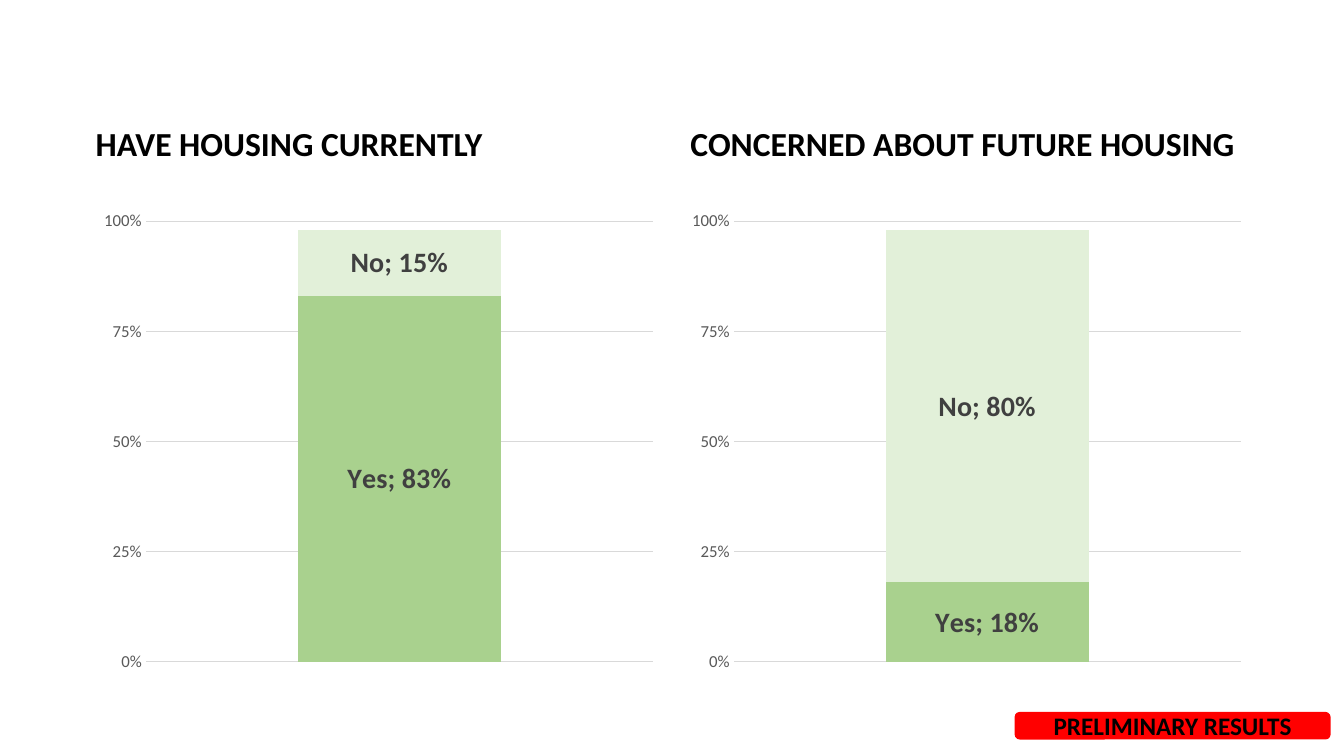
from pptx import Presentation
from pptx.chart.data import CategoryChartData
from pptx.dml.color import RGBColor
from pptx.enum.chart import XL_CHART_TYPE, XL_TICK_MARK
from pptx.enum.shapes import MSO_SHAPE
from pptx.enum.text import MSO_ANCHOR, MSO_AUTO_SIZE, PP_ALIGN
from pptx.util import Inches, Pt

STACKED = XL_CHART_TYPE.COLUMN_STACKED
NO_TICK = XL_TICK_MARK.NONE
ROUNDED = MSO_SHAPE.ROUNDED_RECTANGLE
MIDDLE = MSO_ANCHOR.MIDDLE
GROW = MSO_AUTO_SIZE.SHAPE_TO_FIT_TEXT
LEFT, CENTER = PP_ALIGN.LEFT, PP_ALIGN.CENTER

COLORS = {
    "black": "000000",
    "label": "404040",
    "axis": "595959",
    "grid": "D9D9D9",
    "Yes": "A9D18E",
    "No": "E2F0D9",
    "red": "FF0000",
}


def color(name):
    return RGBColor.from_string(COLORS[name])


def write(frame, text, size=24, align=LEFT):
    """Put one bold black line into a text frame."""
    para = frame.paragraphs[0]
    para.alignment = align
    run = para.add_run()
    run.text = text
    run.font.name = "Calibri"
    run.font.size = Pt(size)
    run.font.bold = True
    run.font.color.rgb = color("black")


deck = Presentation()
deck.slide_width = Inches(13.33)
deck.slide_height = Inches(7.5)
slide = deck.slides.add_slide(deck.slide_layouts[6])
shapes = slide.shapes

# Title, title left, title width, chart left, shares
panels = [
    ("HAVE HOUSING CURRENTLY", 0.85, 4.07, 0.92, {"Yes": 0.83, "No": 0.15}),
    ("CONCERNED ABOUT FUTURE HOUSING", 6.75, 5.65, 6.75, {"Yes": 0.18, "No": 0.8}),
]

for title, left, width, start, shares in panels:
    data = CategoryChartData(number_format="0%")
    data.categories = ["1"]
    for answer, share in shares.items():
        data.add_series(answer, [share])
    chart = shapes.add_chart(
        STACKED, Inches(start), Inches(2), Inches(5.67), Inches(4.76), data
    ).chart
    chart.has_legend = False
    chart.has_title = False
    chart.font.name = "Calibri"
    chart.font.size = Pt(10)
    chart.font.color.rgb = color("black")
    chart.category_axis.visible = False

    axis = chart.value_axis
    axis.minimum_scale = 0
    axis.maximum_scale = 1
    axis.major_unit = 0.25
    axis.major_tick_mark = NO_TICK
    axis.minor_tick_mark = NO_TICK
    axis.format.line.fill.background()
    axis.tick_labels.number_format = "0%"
    axis.tick_labels.number_format_is_linked = False
    axis.tick_labels.font.name = "Calibri"
    axis.tick_labels.font.size = Pt(12)
    axis.tick_labels.font.color.rgb = color("axis")
    grid = axis.major_gridlines.format.line
    grid.color.rgb = color("grid")
    grid.width = Pt(0.75)

    plot = chart.plots[0]
    plot.gap_width = 150
    plot.overlap = 100
    plot.vary_by_categories = False
    for series in plot.series:
        series.format.fill.solid()
        series.format.fill.fore_color.rgb = color(series.name)
        labels = series.data_labels
        labels.show_value = True
        labels.show_series_name = True
        labels.number_format = "0%"
        labels.number_format_is_linked = False
        labels.font.name = "Calibri"
        labels.font.size = Pt(20)
        labels.font.bold = True
        labels.font.color.rgb = color("label")

    box = shapes.add_textbox(Inches(left), Inches(1.17), Inches(width), Inches(0.5))
    box.text_frame.word_wrap = False
    box.text_frame.auto_size = GROW
    write(box.text_frame, title)

badge = shapes.add_shape(ROUNDED, Inches(10.07), Inches(7.07), Inches(3.12), Inches(0.26))
badge.shadow.inherit = False
badge.fill.solid()
badge.fill.fore_color.rgb = color("red")
badge.line.color.rgb = color("red")
badge.line.width = Pt(1)
badge.text_frame.vertical_anchor = MIDDLE
write(badge.text_frame, "PRELIMINARY RESULTS", size=18, align=CENTER)

deck.save("out.pptx")
